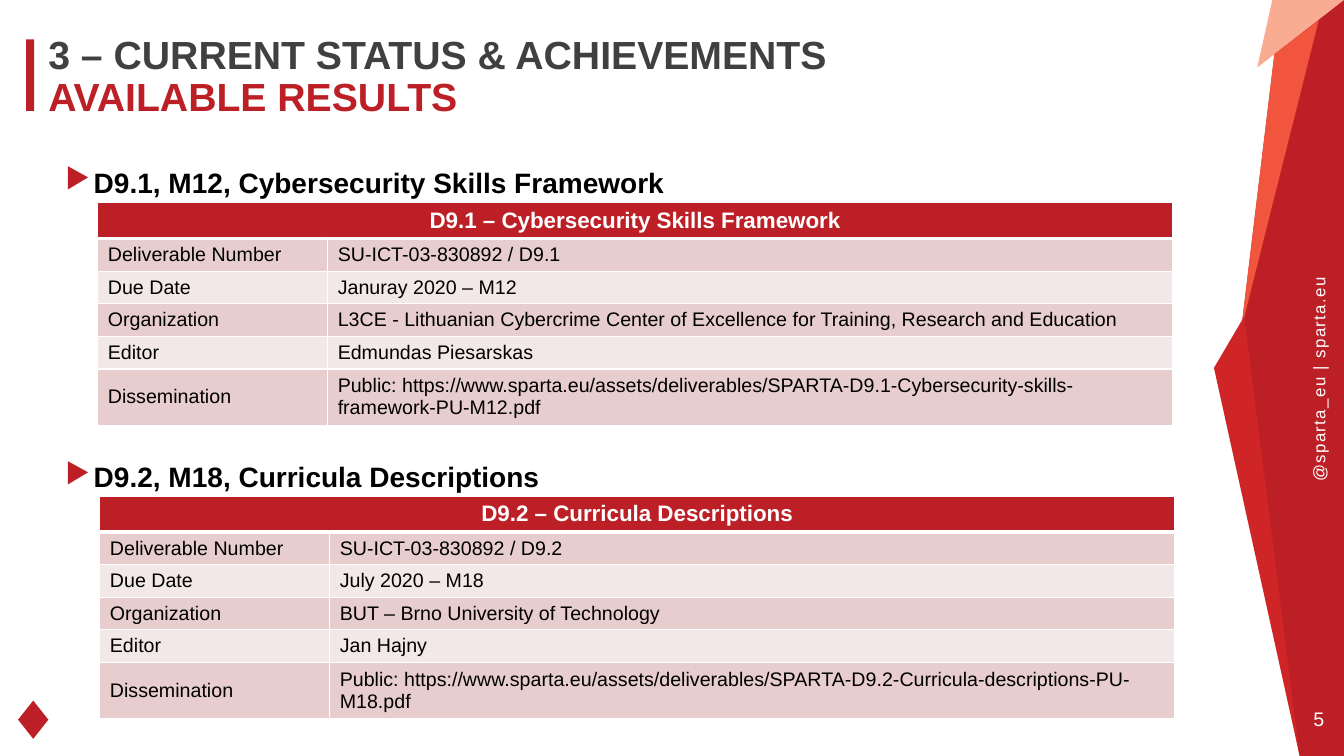
from lxml import etree
from pptx import Presentation
from pptx.dml.color import RGBColor
from pptx.enum.shapes import MSO_SHAPE
from pptx.enum.text import MSO_ANCHOR, PP_ALIGN
from pptx.oxml.ns import qn
from pptx.util import Inches, Pt

CENTER = PP_ALIGN.CENTER
LEFT = PP_ALIGN.LEFT
MIDDLE = MSO_ANCHOR.MIDDLE
TOP = MSO_ANCHOR.TOP
RECTANGLE = MSO_SHAPE.RECTANGLE
DIAMOND = MSO_SHAPE.DIAMOND

RED = "BC2026"
WHITE = "FFFFFF"
BLACK = "000000"


def color(value):
    return RGBColor.from_string(value)


def add_text(left, top, width, height, text, size, text_color, bold=False, anchor=TOP, wrap=True):
    shape = slide.shapes.add_textbox(Inches(left), Inches(top), Inches(width), Inches(height))
    frame = shape.text_frame
    frame.margin_left = frame.margin_right = frame.margin_top = frame.margin_bottom = 0
    frame.word_wrap = wrap
    frame.vertical_anchor = anchor
    frame.text = text
    for run in frame.paragraphs[0].runs:
        run.font.name = "Arial"
        run.font.size = Pt(size)
        run.font.bold = bold
        run.font.color.rgb = color(text_color)
    return shape


presentation = Presentation()
presentation.slide_width = Inches(13.33)
presentation.slide_height = Inches(7.5)
slide = presentation.slides.add_slide(presentation.slide_layouts[6])

ribbon_facets = [
    (RED, [(13.33, 0), (13.33, 7.5), (12.89, 7.5), (12.23, 3.94), (12.64, 0.54), (12.76, 0)]),
    ("F9AC91", [(13.33, 0), (12.47, 0.67), (12.62, 0)]),
    ("F1553D", [(13.08, 0.2), (12.31, 3.27), (12.64, 0.54)]),
    ("D02527", [(12.34, 3.14), (12.89, 7.5), (12.04, 3.65)]),
]
for facet_color, corners in ribbon_facets:
    points = [(Inches(x), Inches(y)) for x, y in corners]
    builder = slide.shapes.build_freeform(*points[0])
    builder.add_line_segments(points[1:], close=True)
    facet = builder.convert_to_shape()
    facet.shadow.inherit = False
    facet.fill.solid()
    facet.fill.fore_color.rgb = color(facet_color)
    facet.line.fill.background()

handle = add_text(12.05, 3.65, 2.06, 0.2, "@sparta_eu | sparta.eu", 12, WHITE, anchor=MIDDLE, wrap=False)
handle.rotation = 270
handle.text_frame.paragraphs[0].runs[0].font._element.set("spc", "100")

page_number = add_text(12.96, 7.01, 0.24, 0.24, "5", 14, WHITE, anchor=MIDDLE, wrap=False)
page_number.text_frame.paragraphs[0].alignment = CENTER

for preset, left, top, width, height in [
    (RECTANGLE, 0.26, 0.39, 0.08, 0.71),
    (DIAMOND, 0.18, 6.95, 0.3, 0.38),
]:
    accent = slide.shapes.add_shape(preset, Inches(left), Inches(top), Inches(width), Inches(height))
    accent.shadow.inherit = False
    accent.fill.solid()
    accent.fill.fore_color.rgb = color(RED)
    accent.line.fill.background()

title = add_text(0.48, 0.35, 11.34, 0.87, "3 – CURRENT STATUS & ACHIEVEMENTS\vAVAILABLE RESULTS", 28, "404040", bold=True)
title_paragraph = title.text_frame.paragraphs[0]
title_paragraph.line_spacing = 0.9
title_paragraph.runs[1].font.color.rgb = color(RED)

labels = ["Deliverable Number", "Due Date", "Organization", "Editor", "Dissemination"]
column_widths = [2.28, 8.38]
row_heights = [0.34, 0.32, 0.32, 0.32, 0.32, 0.54]
deliverables = [
    (1.64, 11.34, "D9.1, M12, Cybersecurity Skills Framework", 0.97, 2.01, "D9.1 – Cybersecurity Skills Framework", [
        "SU-ICT-03-830892 / D9.1",
        "Januray 2020 – M12",
        "L3CE - Lithuanian Cybercrime Center of Excellence for Training, Research and Education",
        "Edmundas Piesarskas",
        "Public: https://www.sparta.eu/assets/deliverables/SPARTA-D9.1-Cybersecurity-skills-framework-PU-M12.pdf",
    ]),
    (4.56, 5.84, "D9.2, M18, Curricula Descriptions", 0.99, 4.92, "D9.2 – Curricula Descriptions", [
        "SU-ICT-03-830892 / D9.2",
        "July 2020 – M18",
        "BUT – Brno University of Technology",
        "Jan Hajny",
        "Public: https://www.sparta.eu/assets/deliverables/SPARTA-D9.2-Curricula-descriptions-PU-M18.pdf",
    ]),
]

for heading_top, heading_width, heading_text, table_left, table_top, header, values in deliverables:
    heading = add_text(0.65, heading_top, heading_width, 2.84, heading_text, 20, BLACK, bold=True)
    paragraph = heading.text_frame.paragraphs[0]
    properties = paragraph._p.get_or_add_pPr()
    properties.set("marL", str(Inches(0.28)))
    properties.set("indent", str(Inches(-0.28)))
    bullet_color = etree.SubElement(properties, qn("a:buClr"))
    etree.SubElement(bullet_color, qn("a:srgbClr"), val=RED)
    etree.SubElement(properties, qn("a:buChar"), char="▶")
    paragraph.space_after = Pt(6)

    rows = [(header, "")] + list(zip(labels, values))
    table = slide.shapes.add_table(
        len(rows), 2, Inches(table_left), Inches(table_top),
        Inches(sum(column_widths)), Inches(sum(row_heights)),
    ).table
    for column, width in zip(table.columns, column_widths):
        column.width = Inches(width)
    table.cell(0, 0).merge(table.cell(0, 1))

    for row_index, row in enumerate(rows):
        is_header = row_index == 0
        table.rows[row_index].height = Inches(row_heights[row_index])
        row_fill = RED if is_header else ("F3E8E8", "E7CDCD")[row_index % 2]
        for column_index, text in enumerate(row):
            cell = table.cell(row_index, column_index)
            cell.vertical_anchor = MIDDLE
            cell.margin_top = cell.margin_bottom = Inches(0.045)
            cell_properties = cell._tc.get_or_add_tcPr()
            for side in "LRTB":
                thick = (is_header and side == "B") or (row_index == 1 and side == "T")
                border = etree.SubElement(cell_properties, qn(f"a:ln{side}"), w=str(Pt(3 if thick else 1)))
                border_fill = etree.SubElement(border, qn("a:solidFill"))
                etree.SubElement(border_fill, qn("a:srgbClr"), val=WHITE)
            cell.fill.solid()
            cell.fill.fore_color.rgb = color(row_fill)
            if cell.is_spanned:
                continue
            cell.text_frame.text = text
            paragraph = cell.text_frame.paragraphs[0]
            paragraph.alignment = CENTER if is_header else LEFT
            font = paragraph.runs[0].font
            font.name = "Arial"
            font.size = Pt(16 if is_header else 14)
            font.bold = is_header
            font.color.rgb = color(WHITE if is_header else BLACK)

presentation.save("out.pptx")
